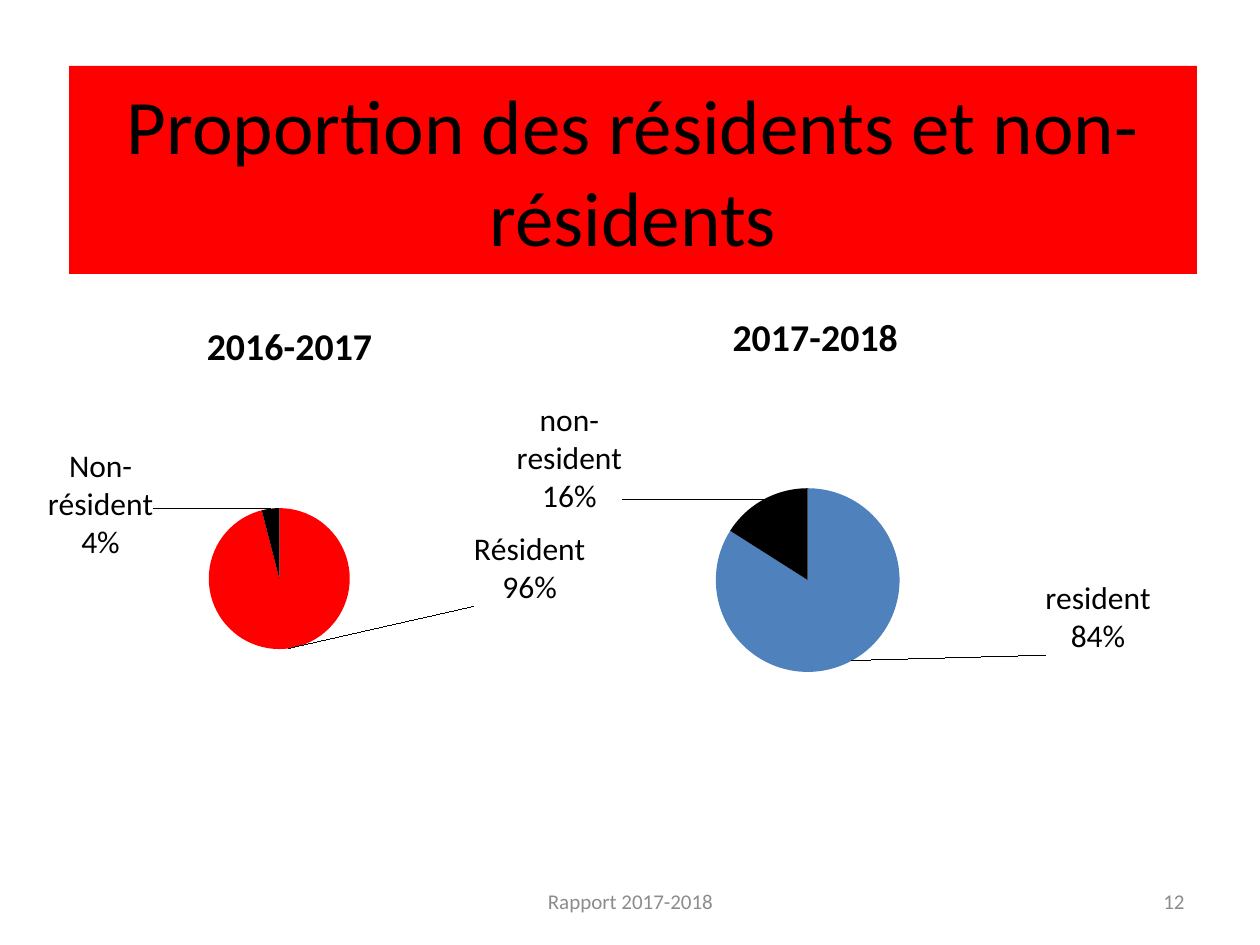
from pptx import Presentation
from pptx.chart.data import CategoryChartData
from pptx.dml.color import RGBColor
from pptx.enum.chart import XL_CHART_TYPE
from pptx.enum.shapes import MSO_SHAPE
from pptx.enum.text import MSO_ANCHOR, PP_ALIGN
from pptx.oxml import parse_xml
from pptx.oxml.ns import nsdecls
from pptx.util import Emu, Pt

PIE = XL_CHART_TYPE.PIE
RECTANGLE = MSO_SHAPE.RECTANGLE
MIDDLE = MSO_ANCHOR.MIDDLE
CENTER, RIGHT = PP_ALIGN.CENTER, PP_ALIGN.RIGHT

RED = RGBColor(0xFF, 0x00, 0x00)
BLACK = RGBColor(0x00, 0x00, 0x00)
BLUE = RGBColor(0x4F, 0x81, 0xBD)
GREY = RGBColor(0x8C, 0x8C, 0x8C)

FONT = "Calibri"
EMU_PER_INCH = 914400
PX_PER_INCH = 126


def px(length):
    return Emu(round(length * EMU_PER_INCH / PX_PER_INCH))


def layout_xml(**values):
    """Manual chart layout; values are fractions of the chart frame."""
    parts = "".join(f'<c:{name} val="{value}"/>' for name, value in values.items())
    return f'<c:layout {nsdecls("c")}><c:manualLayout>{parts}</c:manualLayout></c:layout>'


def set_layout(parent, index, **values):
    for old in parent.xpath("./c:layout"):
        parent.remove(old)
    parent.insert(index, parse_xml(layout_xml(**values)))


def label_xml(index, x, y):
    return (
        f'<c:dLbl {nsdecls("c")}><c:idx val="{index}"/>{layout_xml(x=x, y=y)}'
        '<c:showLegendKey val="0"/><c:showVal val="0"/><c:showCatName val="1"/>'
        '<c:showSerName val="0"/><c:showPercent val="1"/><c:showBubbleSize val="0"/>'
        "<c:separator>\n</c:separator></c:dLbl>"
    )


class SlideBuilder:
    def __init__(self, slide, font):
        self.slide = slide
        self.font = font

    def set_text(self, box, text, size, color, align):
        frame = box.text_frame
        frame.word_wrap = True
        frame.vertical_anchor = MIDDLE
        para = frame.paragraphs[0]
        para.text = text
        para.alignment = align
        para.font.name = self.font
        para.font.size = Pt(size)
        para.font.color.rgb = color

    def banner(self, text, frame, fill):
        box = self.slide.shapes.add_shape(RECTANGLE, *map(px, frame))
        box.shadow.inherit = False
        box.fill.solid()
        box.fill.fore_color.rgb = fill
        box.line.fill.background()
        self.set_text(box, text, 44, BLACK, CENTER)

    def footer(self, text, frame, align):
        box = self.slide.shapes.add_textbox(*map(px, frame))
        self.set_text(box, text, 12, GREY, align)

    def pie(self, title, frame, title_at, disc, slices):
        """title_at and disc are on the slide; each slice has a label shift."""
        left, top, width, height = frame
        data = CategoryChartData()
        data.categories = [name for name, *_ in slices]
        data.add_series("Series 1", [value for _, value, *_ in slices])
        chart = self.slide.shapes.add_chart(PIE, *map(px, frame), data).chart
        chart.has_legend = False
        chart.font.name = self.font
        chart.font.size = Pt(18)
        chart.font.color.rgb = BLACK

        # Title
        chart.has_title = True
        para = chart.chart_title.text_frame.paragraphs[0]
        para.text = title
        para.font.name = self.font
        para.font.size = Pt(21.6)
        para.font.bold = True
        para.font.color.rgb = BLACK
        root = chart.element
        title_x, title_y = title_at
        set_layout(root.xpath("./c:chart/c:title")[0], 1, xMode="edge", yMode="edge",
                   x=round((title_x - left) / width, 3), y=round((title_y - top) / height, 3))

        # Disc
        disc_x, disc_y, size = disc
        set_layout(root.xpath("./c:chart/c:plotArea")[0], 0,
                   layoutTarget="inner", xMode="edge", yMode="edge",
                   x=round((disc_x - left) / width, 3), y=round((disc_y - top) / height, 3),
                   w=round(size / width, 3), h=round(size / height, 3))

        # Slices and their labels
        chart.plots[0].vary_by_categories = True
        series = chart.plots[0].series[0]
        labels = series.data_labels
        labels.show_value = False
        labels.show_percentage = True
        labels.show_category_name = True
        label_list = root.xpath(".//c:ser/c:dLbls")[0]
        for index, (_, _, color, (shift_x, shift_y)) in enumerate(slices):
            point = series.points[index]
            point.format.fill.solid()
            point.format.fill.fore_color.rgb = color
            point.format.line.fill.background()
            label = label_xml(index, round(shift_x / width, 3), round(shift_y / height, 3))
            label_list.insert(index, parse_xml(label))


def main():
    deck = Presentation()
    deck.slide_width, deck.slide_height = px(1260), px(945)
    page = SlideBuilder(deck.slides.add_slide(deck.slide_layouts[6]), FONT)

    # Heading
    page.banner("Proportion des résidents et non-résidents", (69, 66, 1128, 208), RED)

    # Pie charts, one per school year
    page.pie("2016-2017", (-35, 283, 635, 466), (200, 313), (209, 508, 141),
             [("Résident", 96, RED, (185, -126)),
              ("Non-résident", 4, BLACK, (-116, 60))])
    page.pie("2017-2018", (432, 275, 753, 489), (726, 303), (716, 488, 184),
             [("resident", 84, BLUE, (190, -88)),
              ("non-resident", 16, BLACK, (-138, 22))])

    # Footer
    page.footer("Rapport 2017-2018", (431, 876, 399, 50), CENTER)
    page.footer("12", (903, 876, 294, 50), RIGHT)

    deck.save("out.pptx")


if __name__ == "__main__":
    main()
